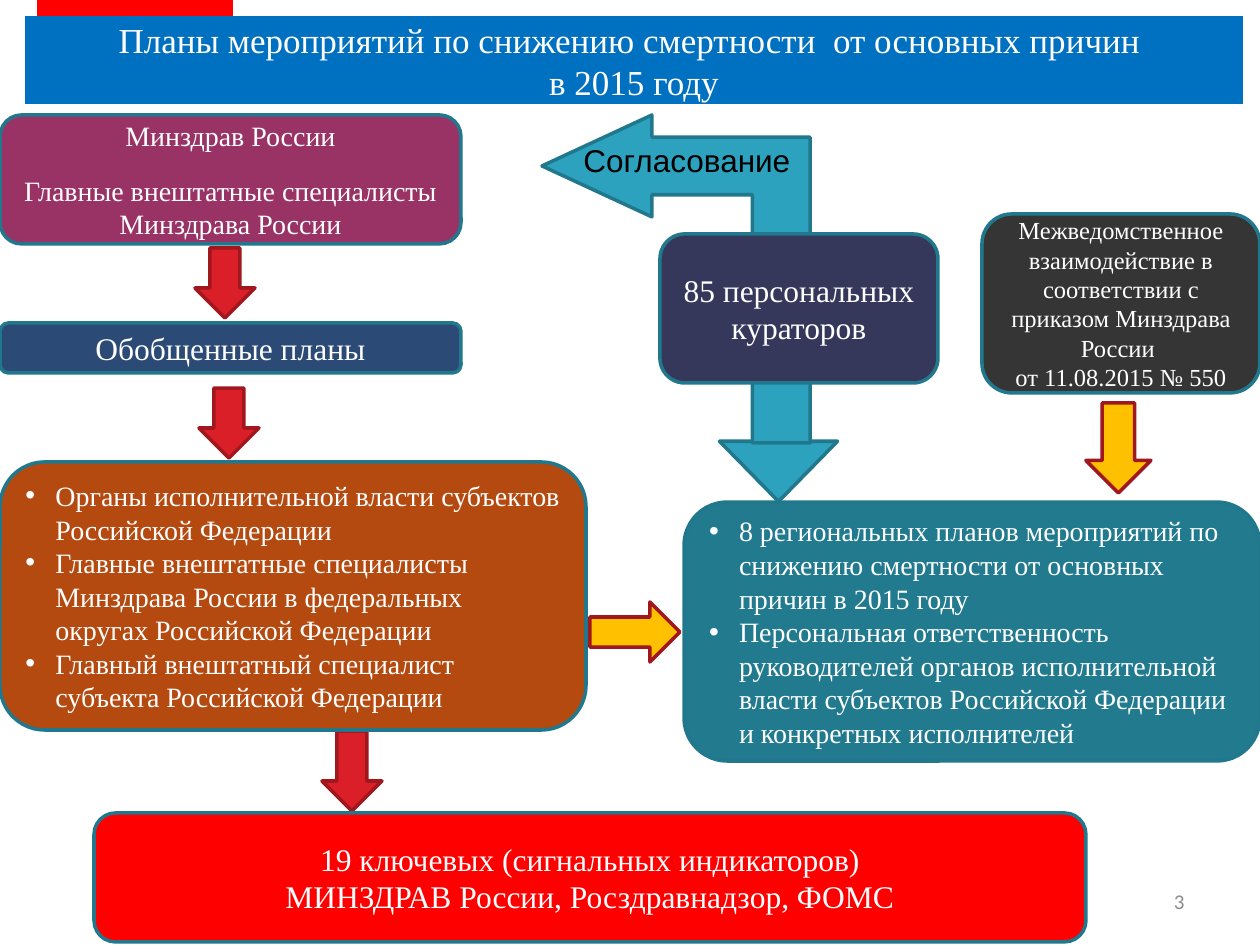
from dataclasses import dataclass

from lxml import etree
from pptx import Presentation
from pptx.dml.color import RGBColor
from pptx.enum.shapes import MSO_SHAPE
from pptx.enum.text import MSO_ANCHOR, MSO_AUTO_SIZE, PP_ALIGN
from pptx.oxml.ns import qn
from pptx.util import Pt

EMU_PER_PX = 914400 / 126
BULLET_INDENT = 30


@dataclass(frozen=True)
class Theme:
    serif: str = "Times New Roman"
    sans: str = "Arial"
    number_font: str = "Calibri"
    title_size: int = 20
    large: int = 18
    body: int = 16
    small: int = 14
    number_size: int = 12
    line_width: int = 2
    white: str = "FFFFFF"
    black: str = "000000"
    grey: str = "8C8C8C"
    red: str = "FF0000"
    title_blue: str = "0070C0"
    outline: str = "21788D"
    arrow_outline: str = "A1171E"
    arrow_red: str = "DA1F28"
    arrow_yellow: str = "FFC000"
    arrow_blue: str = "2DA2BF"
    ministry: str = "993366"
    plans: str = "2B4A76"
    authorities: str = "B54A10"
    curators: str = "35385A"
    interagency: str = "353535"
    regional: str = "227A8F"


THEME = Theme()


def px(value):
    return round(value * EMU_PER_PX)


def rgb(code):
    return RGBColor.from_string(code)


def write(frame, lines, size, color=THEME.white, font=THEME.serif,
          align=PP_ALIGN.CENTER, anchor=MSO_ANCHOR.MIDDLE):
    """Fill a text frame, one paragraph a line; a vertical tab breaks a line."""
    frame.word_wrap = True
    frame.auto_size = MSO_AUTO_SIZE.NONE
    frame.vertical_anchor = anchor
    for index, line in enumerate(lines):
        para = frame.add_paragraph() if index else frame.paragraphs[0]
        para.text = line
        para.alignment = align
        para.font.name = font
        para.font.size = Pt(size)
        para.font.color.rgb = rgb(color)


def add_bullets(frame):
    for para in frame.paragraphs:
        properties = para._p.get_or_add_pPr()
        properties.set("marL", str(px(BULLET_INDENT)))
        properties.set("indent", str(-px(BULLET_INDENT)))
        font = etree.Element(qn("a:buFont"), typeface=THEME.sans)
        mark = etree.Element(qn("a:buChar"), char="•")
        # Bullet elements come before the paragraph's default run properties.
        properties.insert(0, font)
        properties.insert(1, mark)


def add_figure(page, kind, bounds, fill, line=None, rotation=0, adjustments=()):
    figure = page.shapes.add_shape(kind, *map(px, bounds))
    figure.shadow.inherit = False
    figure.rotation = rotation
    for index, value in enumerate(adjustments):
        figure.adjustments[index] = value
    figure.fill.solid()
    figure.fill.fore_color.rgb = rgb(fill)
    if line:
        figure.line.color.rgb = rgb(line)
        figure.line.width = Pt(THEME.line_width)
    else:
        figure.line.fill.background()
    return figure


def add_box(page, bounds, fill, lines, size, bulleted=False):
    box = add_figure(page, MSO_SHAPE.ROUNDED_RECTANGLE, bounds, fill, THEME.outline)
    align = PP_ALIGN.LEFT if bulleted else PP_ALIGN.CENTER
    write(box.text_frame, lines, size, align=align)
    if bulleted:
        add_bullets(box.text_frame)
    return box


def add_arrow(page, bounds, fill, rotation=0):
    add_figure(page, MSO_SHAPE.DOWN_ARROW, bounds, fill, THEME.arrow_outline, rotation)


def add_label(page, bounds, text, size, **style):
    label = page.shapes.add_textbox(*map(px, bounds))
    write(label.text_frame, [text], size, **style)


def set_title(page, bounds, text):
    title = page.shapes.title
    title.left, title.top, title.width, title.height = map(px, bounds)
    title.fill.solid()
    title.fill.fore_color.rgb = rgb(THEME.title_blue)
    write(title.text_frame, [text], THEME.title_size)


def add_approval_route(page):
    """Blue arrows that lead from the curators to the ministry and the regions."""
    add_figure(page, MSO_SHAPE.RIGHT_ARROW, (709, 373, 139, 118), THEME.arrow_blue,
               THEME.outline, 90, (0, 0.51))
    add_figure(page, MSO_SHAPE.BENT_UP_ARROW, (512, 145, 328, 268), THEME.arrow_blue,
               THEME.outline, 270, (0.215, 0.19, 0.41))
    add_label(page, (571, 135, 297, 50), "Согласование", THEME.large,
              color=THEME.black, font=THEME.sans, align=PP_ALIGN.LEFT,
              anchor=MSO_ANCHOR.TOP)


def add_plan_boxes(page):
    ministry = add_box(page, (0, 115, 461, 129), THEME.ministry, [
        "Минздрав России",
        "Главные внештатные специалисты Минздрава России",
    ], THEME.body)
    ministry.text_frame.paragraphs[1].space_before = Pt(12)
    add_box(page, (0, 323, 461, 50), THEME.plans, ["Обобщенные планы"], THEME.large)
    add_box(page, (0, 462, 586, 268), THEME.authorities, [
        "Органы исполнительной власти субъектов Российской Федерации",
        "Главные внештатные специалисты Минздрава России в федеральных "
        "округах Российской Федерации",
        "Главный внештатный специалист субъекта Российской Федерации",
    ], THEME.body, bulleted=True)
    add_box(page, (684, 502, 576, 259), THEME.regional, [
        "8 региональных планов мероприятий по снижению смертности от основных "
        "причин в 2015 году",
        "Персональная ответственность руководителей органов исполнительной "
        "власти субъектов Российской Федерации и конкретных исполнителей",
    ], THEME.body, bulleted=True)
    add_box(page, (660, 234, 278, 149), THEME.curators,
            ["85 персональных", "кураторов"], THEME.large)
    add_box(page, (982, 214, 278, 179), THEME.interagency, [
        "Межведомственное взаимодействие в соответствии с приказом "
        "Минздрава России \vот 11.08.2015 № 550",
    ], THEME.small)
    add_box(page, (94, 813, 992, 129), THEME.red, [
        "19 ключевых (сигнальных индикаторов)",
        "МИНЗДРАВ России, Росздравнадзор, ФОМС",
    ], THEME.large)


def main():
    deck = Presentation()
    deck.slide_width, deck.slide_height = px(1260), px(945)
    page = deck.slides.add_slide(deck.slide_layouts[5])

    set_title(page, (25, 16, 1218, 88),
              "Планы мероприятий по снижению смертности  от основных причин \vв 2015 году")
    add_figure(page, MSO_SHAPE.RECTANGLE, (37, 0, 196, 16), THEME.red)
    add_label(page, (903, 876, 294, 50), "3", THEME.number_size, color=THEME.grey,
              font=THEME.number_font, align=PP_ALIGN.RIGHT)

    add_approval_route(page)
    add_arrow(page, (322, 731, 60, 80), THEME.arrow_red)
    add_plan_boxes(page)
    for left, top in ((195, 248), (199, 388)):
        add_arrow(page, (left, top, 60, 70), THEME.arrow_red)
    add_arrow(page, (1086, 403, 65, 90), THEME.arrow_yellow)
    add_arrow(page, (605, 587, 60, 90), THEME.arrow_yellow, rotation=270)

    deck.save("out.pptx")


if __name__ == "__main__":
    main()
